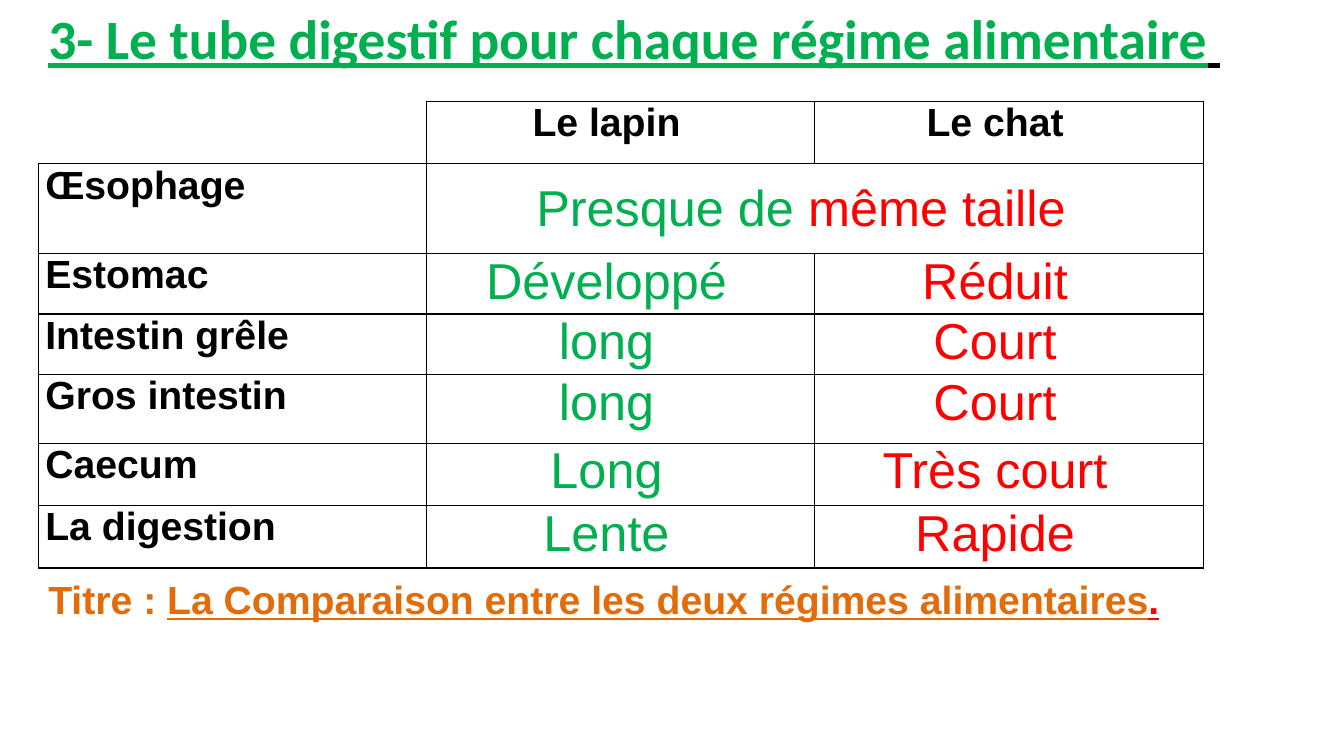
import pptx
import pptx.dml.color
import pptx.enum.text
import pptx.oxml
import pptx.oxml.ns
import pptx.util

Pt = pptx.util.Pt
ALIGN = pptx.enum.text.PP_ALIGN
ANCHOR = pptx.enum.text.MSO_ANCHOR

BLACK, GREEN, RED, ORANGE = "000000", "00B050", "FF0000", "E36C0A"
COLUMN_WIDTHS = [277.2, 277.2, 277.9]
ROW_HEIGHTS = [44.6, 64.1, 40.4, 40.4, 49, 44.6, 44.6]
ANIMALS = ["Le lapin", "Le chat"]
ORGANS = [
    ("Œsophage", "Presque de ", "même taille"),
    ("Estomac", "Développé", "Réduit"),
    ("Intestin grêle", "long", "Court"),
    ("Gros intestin", "long", "Court"),
    ("Caecum", "Long", "Très court"),
    ("La digestion", "Lente", "Rapide"),
]


def color(value):
    return pptx.dml.color.RGBColor.from_string(value)


def write(para, spans, size, bold, font="Arial"):
    """Fill a paragraph with (text, color, underlined) spans."""
    para.font.name, para.font.size, para.font.bold = font, Pt(size), bold
    for text, shade, underlined in spans:
        span = para.add_run()
        span.text = text
        span.font.color.rgb = color(shade)
        span.font.name, span.font.size, span.font.bold = font, Pt(size), bold
        if underlined:
            span.font.underline = True


def add_text(page, left, top, width, height):
    frame = page.shapes.add_textbox(Pt(left), Pt(top), Pt(width), Pt(height)).text_frame
    frame.word_wrap = True
    return frame


def add_title(page, left, top, width, height):
    frame = add_text(page, left, top, width, height)
    frame.margin_top = Pt(8.6)
    para = frame.paragraphs[0]
    para.line_spacing = 0.9
    title = "3- Le tube digestif pour chaque régime alimentaire"
    write(para, [(title, GREEN, True), (" ", BLACK, True)], 39.6, True, "Calibri")


def add_caption(page, left, top, width, height):
    para = add_text(page, left, top, width, height).paragraphs[0]
    para.space_before = Pt(3)
    write(para, [("Titre : ", ORANGE, False),
                 ("La Comparaison entre les deux régimes alimentaires", ORANGE, True),
                 (".", RED, True)], 28, True)


def draw_borders(cell, sides):
    """Rule the named sides (L, R, T, B) and clear the others."""
    properties = cell._tc.get_or_add_tcPr()
    for side in "LRTB":
        paint = "<a:noFill/>"
        if side in sides:
            paint = f'<a:solidFill><a:srgbClr val="{BLACK}"/></a:solidFill>'
        properties.append(pptx.oxml.parse_xml(
            f'<a:ln{side} {pptx.oxml.ns.nsdecls("a")} w="{Pt(1)}">{paint}</a:ln{side}>'))


def fill_cell(cell, spans, size, bold, centered=True):
    para = cell.text_frame.paragraphs[0]
    para.space_before = Pt(3)
    if centered:
        para.alignment = ALIGN.CENTER
        cell.margin_right = Pt(25)
    write(para, spans, size, bold)


def add_comparison(page, left, top):
    shape = page.shapes.add_table(
        len(ROW_HEIGHTS), len(COLUMN_WIDTHS), Pt(left), Pt(top),
        Pt(sum(COLUMN_WIDTHS)), Pt(sum(ROW_HEIGHTS)))
    table = shape.table
    table.first_row = table.horz_banding = False
    for column, width in zip(table.columns, COLUMN_WIDTHS):
        column.width = Pt(width)
    for row, height in zip(table.rows, ROW_HEIGHTS):
        row.height = Pt(height)

    # Grid, open at the top left corner
    for cell in table.iter_cells():
        cell.margin_left = cell.margin_right = Pt(5)
        cell.margin_top = cell.margin_bottom = 0
        draw_borders(cell, "RB" if cell is None or cell == table.cell(0, 0) else "LRTB")
        cell.fill.background()

    # Header row
    for index, animal in enumerate(ANIMALS, 1):
        fill_cell(table.cell(0, index), [(animal, BLACK, False)], 28, True)

    # One row per organ; the first shares a single answer
    for index, (organ, rabbit, cat) in enumerate(ORGANS, 1):
        fill_cell(table.cell(index, 0), [(organ, BLACK, False)], 28, True, centered=False)
        answers = [(rabbit, GREEN, False), (cat, RED, False)]
        if index == 1:
            shared = table.cell(index, 1)
            shared.merge(table.cell(index, 2))
            shared.vertical_anchor = ANCHOR.MIDDLE
            fill_cell(shared, answers, 36, False)
        else:
            for column, answer in enumerate(answers, 1):
                fill_cell(table.cell(index, column), [answer], 36, False)


def main():
    deck = pptx.Presentation()
    deck.slide_width, deck.slide_height = Pt(960), Pt(540)
    page = deck.slides.add_slide(deck.slide_layouts[6])
    add_title(page, 27.4, 0, 876, 104.4)
    add_comparison(page, 27.4, 72.4)
    add_caption(page, 27.4, 407.5, 831.6, 41)
    deck.save("out.pptx")


if __name__ == "__main__":
    main()
